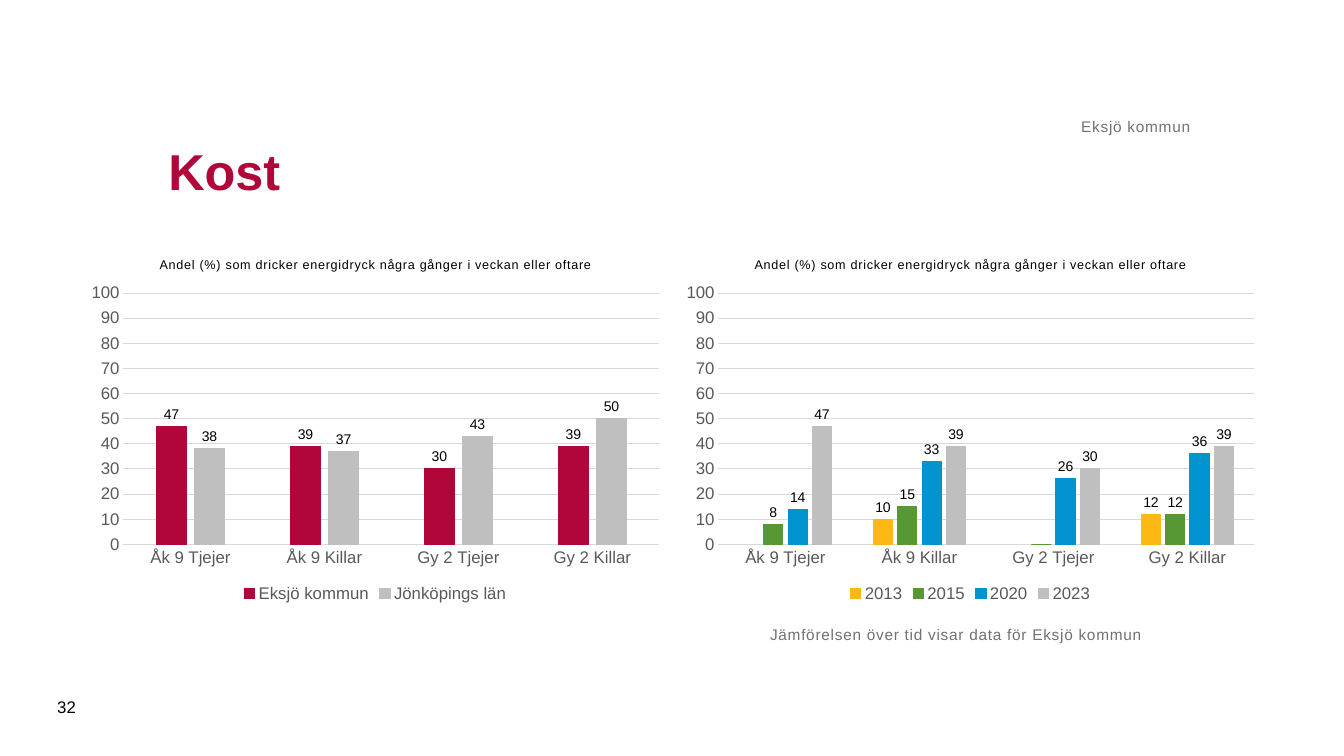
import copy
from dataclasses import dataclass
from typing import Optional

import lxml.etree
import pptx
import pptx.chart.data
import pptx.dml.color
import pptx.enum.chart
import pptx.enum.text
import pptx.oxml
import pptx.oxml.ns
import pptx.util

Pt = pptx.util.Pt
ANCHOR = pptx.enum.text.MSO_ANCHOR
ALIGN = pptx.enum.text.PP_ALIGN

COLOURS = {
    "crimson": "B1063A", "silver": "BFBFBF", "yellow": "FDB913",
    "green": "579835", "blue": "0093D0", "black": "000000",
    "axis": "595959", "grid": "D9D9D9", "note": "717171",
}
FONT = "Arial"
NUMBER_FORMAT = "#,##0;#,##0"
GROUPS = ["Åk 9 Tjejer", "Åk 9 Killar", "Gy 2 Tjejer", "Gy 2 Killar"]
CHART_TITLE = "Andel (%) som dricker energidryck några gånger i veckan eller oftare"


@dataclass
class Bars:
    name: str
    values: list[Optional[int]]
    colour: str


@dataclass
class ChartPanel:
    left: float
    series: list[Bars]


@dataclass
class Label:
    text: str
    left: float
    top: float
    width: float
    height: float
    size: float
    colour: str
    anchor: ANCHOR
    align: ALIGN = ALIGN.LEFT
    spacing: int = 0
    inset: float = 0


PANELS = [
    ChartPanel(56.9, [
        Bars("Eksjö kommun", [47, 39, 30, 39], "crimson"),
        Bars("Jönköpings län", [38, 37, 43, 50], "silver"),
    ]),
    ChartPanel(481.9, [
        Bars("2013", [None, 10, None, 12], "yellow"),
        Bars("2015", [8, 15, 0, 12], "green"),
        Bars("2020", [14, 33, 26, 36], "blue"),
        Bars("2023", [47, 39, 30, 39], "silver"),
    ]),
]
LABELS = [
    Label("Jämförelsen över tid visar data för Eksjö kommun",
          550, 446.4, 382.3, 67.7, 11, "note", ANCHOR.TOP, spacing=50),
    Label("Eksjö kommun", 113, 44.6, 737.3, 52.6, 11, "note",
          ANCHOR.BOTTOM, ALIGN.RIGHT, spacing=50),
    Label("32", 33.8, 490.3, 41, 28.8, 12, "black", ANCHOR.MIDDLE, inset=7.2),
]


def rgb(colour: str) -> pptx.dml.color.RGBColor:
    return pptx.dml.color.RGBColor.from_string(COLOURS[colour])


def style_font(font, size: float, colour: str, bold: bool = False) -> None:
    font.name = FONT
    font.size = Pt(size)
    font.bold = bold
    font.color.rgb = rgb(colour)


def style_line(line, colour: str) -> None:
    line.color.rgb = rgb(colour)
    line.width = Pt(0.75)


def set_spacing(span, spacing: int) -> None:
    span._r.get_or_add_rPr().set("spc", str(spacing))


def hide_point_label(labels, point: int) -> None:
    tag = pptx.oxml.ns.qn
    entry = lxml.etree.Element(tag("c:dLbl"))
    lxml.etree.SubElement(entry, tag("c:idx")).set("val", str(point))
    lxml.etree.SubElement(entry, tag("c:delete")).set("val", "1")
    labels._element.insert(0, entry)


def style_axes(chart) -> None:
    for axis in (chart.category_axis, chart.value_axis):
        axis.major_tick_mark = pptx.enum.chart.XL_TICK_MARK.NONE
        axis.minor_tick_mark = pptx.enum.chart.XL_TICK_MARK.NONE
        style_font(axis.tick_labels.font, 12, "axis")
    style_line(chart.category_axis.format.line, "grid")
    values = chart.value_axis
    values.minimum_scale, values.maximum_scale, values.major_unit = 0, 100, 10
    values.format.line.fill.background()
    style_line(values.major_gridlines.format.line, "grid")
    values.tick_labels.number_format = NUMBER_FORMAT
    values.tick_labels.number_format_is_linked = False


def style_bars(series, bars: Bars) -> None:
    series.format.fill.solid()
    series.format.fill.fore_color.rgb = rgb(bars.colour)
    style_line(series.format.line, bars.colour)
    labels = series.data_labels
    labels.show_value = True
    labels.position = pptx.enum.chart.XL_LABEL_POSITION.OUTSIDE_END
    labels.number_format = NUMBER_FORMAT
    labels.number_format_is_linked = False
    style_font(labels.font, 10, "black")
    if 0 in bars.values:
        hide_point_label(labels, bars.values.index(0))


def add_panel(page, panel: ChartPanel) -> None:
    data = pptx.chart.data.CategoryChartData()
    data.categories = GROUPS
    for bars in panel.series:
        data.add_series(bars.name, bars.values)
    chart = page.shapes.add_chart(
        pptx.enum.chart.XL_CHART_TYPE.COLUMN_CLUSTERED,
        Pt(panel.left), Pt(172.8), Pt(422.6), Pt(260.6), data).chart
    style_font(chart.font, 10, "black")

    # Chart title
    chart.has_title = True
    para = chart.chart_title.text_frame.paragraphs[0]
    para.text = CHART_TITLE
    style_font(para.runs[0].font, 9, "black")
    set_spacing(para.runs[0], 50)

    # Legend, axes and columns
    chart.has_legend = True
    chart.legend.position = pptx.enum.chart.XL_LEGEND_POSITION.BOTTOM
    chart.legend.include_in_layout = False
    style_font(chart.legend.font, 12, "axis")
    style_axes(chart)
    plot = chart.plots[0]
    plot.gap_width, plot.overlap, plot.vary_by_categories = 219, -27, False
    for series, bars in zip(plot.series, panel.series):
        style_bars(series, bars)


def add_label(page, label: Label) -> None:
    box = page.shapes.add_textbox(
        Pt(label.left), Pt(label.top), Pt(label.width), Pt(label.height))
    frame = box.text_frame
    frame.word_wrap = True
    frame.vertical_anchor = label.anchor
    frame.margin_left = frame.margin_right = Pt(label.inset)
    frame.margin_top = frame.margin_bottom = Pt(label.inset / 2)
    frame.text = label.text
    para = frame.paragraphs[0]
    para.alignment = label.align
    style_font(para.runs[0].font, label.size, label.colour)
    if label.spacing:
        set_spacing(para.runs[0], label.spacing)


def add_title(page, text: str) -> None:
    title = page.shapes.title
    title.left, title.top = Pt(113), Pt(70.6)
    title.width, title.height = Pt(737.3), Pt(102.2)
    frame = title.text_frame
    frame.text = text
    frame.auto_size = pptx.enum.text.MSO_AUTO_SIZE.NONE
    frame.vertical_anchor = ANCHOR.MIDDLE
    frame.paragraphs[0].alignment = ALIGN.LEFT
    style_font(frame.paragraphs[0].runs[0].font, 36, "crimson", bold=True)


def main() -> None:
    deck = pptx.Presentation()
    deck.slide_width, deck.slide_height = Pt(960), Pt(540)
    page = deck.slides.add_slide(deck.slide_layouts[5])
    for panel in PANELS:
        add_panel(page, panel)
    add_title(page, "Kost")
    for label in LABELS:
        add_label(page, label)
    deck.save("out.pptx")


if __name__ == "__main__":
    main()
